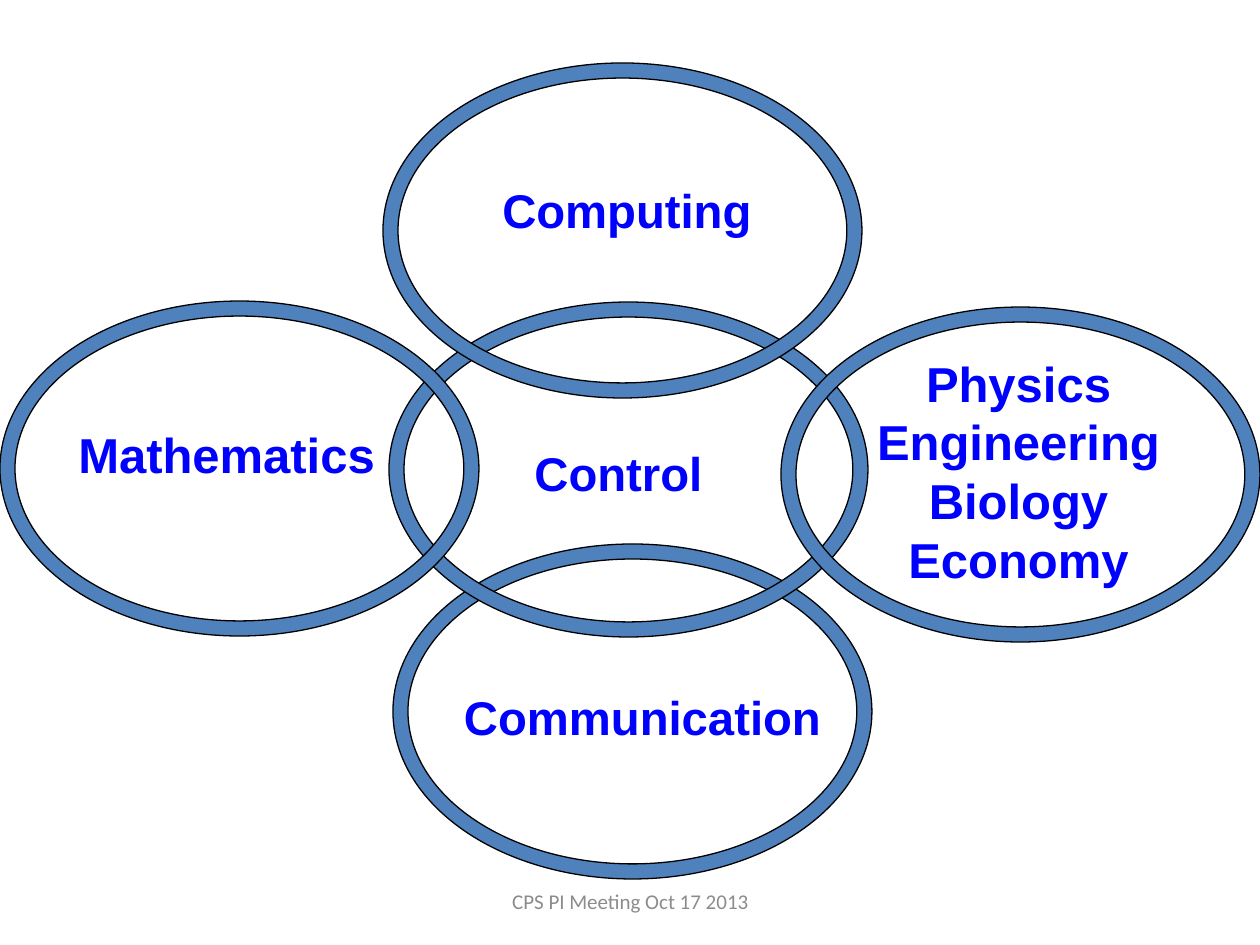
import pptx
import pptx.util
import pptx.dml.color
import pptx.enum.shapes
import pptx.enum.text

PX = 914400 / 126
ALIGN = pptx.enum.text.PP_ALIGN
ANCHOR = pptx.enum.text.MSO_ANCHOR


def rgb(value):
    return pptx.dml.color.RGBColor.from_string(value)


def add_text(s, box, lines, size, align=ALIGN.CENTER, font="Arial",
             color="0000FF", bold=True, anchor=ANCHOR.TOP):
    sp = s.shapes.add_textbox(*[round(v * PX) for v in box])
    tf = sp.text_frame
    frame = {"word_wrap": True, "vertical_anchor": anchor}
    for name, value in frame.items():
        setattr(tf, name, value)
    for i, line in enumerate(lines):
        p = tf.paragraphs[0] if i == 0 else tf.add_paragraph()
        p.alignment = align
        r = p.add_run()
        r.text = line
        style = {"name": font, "size": pptx.util.Pt(size), "bold": bold}
        for name, value in style.items():
            setattr(r.font, name, value)
        r.font.color.rgb = rgb(color)


prs = pptx.Presentation()
prs.slide_width, prs.slide_height = round(1260 * PX), round(945 * PX)
s = prs.slides.add_slide(prs.slide_layouts[6])

for box, label in [
    ((504, 438, 229, 71), "Control"),
    ((469, 175, 316, 71), "Computing"),
    ((431, 682, 423, 71), "Communication"),
]:
    add_text(s, box, [label], 27)

for x, y in [(393, 544), (389, 302), (781, 307), (0, 301), (383, 63)]:
    sp = s.shapes.add_shape(pptx.enum.shapes.MSO_SHAPE.DONUT,
                            *[round(v * PX) for v in (x, y, 479, 335)])
    sp.adjustments[0] = 0.045
    sp.shadow.inherit = False
    sp.fill.solid()
    sp.fill.fore_color.rgb = rgb("4F81BD")
    sp.line.color.rgb = rgb("000000")
    sp.line.width = pptx.util.Pt(0.75)

add_text(s, (66, 418, 353, 111), ["Mathematics"], 28, ALIGN.LEFT)
add_text(s, (857, 347, 323, 289),
         ["Physics", "Engineering", "Biology", "Economy"], 28)
add_text(s, (431, 876, 399, 50), ["CPS PI Meeting Oct 17 2013"], 12,
         font="Calibri", color="8C8C8C", bold=False, anchor=ANCHOR.MIDDLE)

prs.save("out.pptx")
